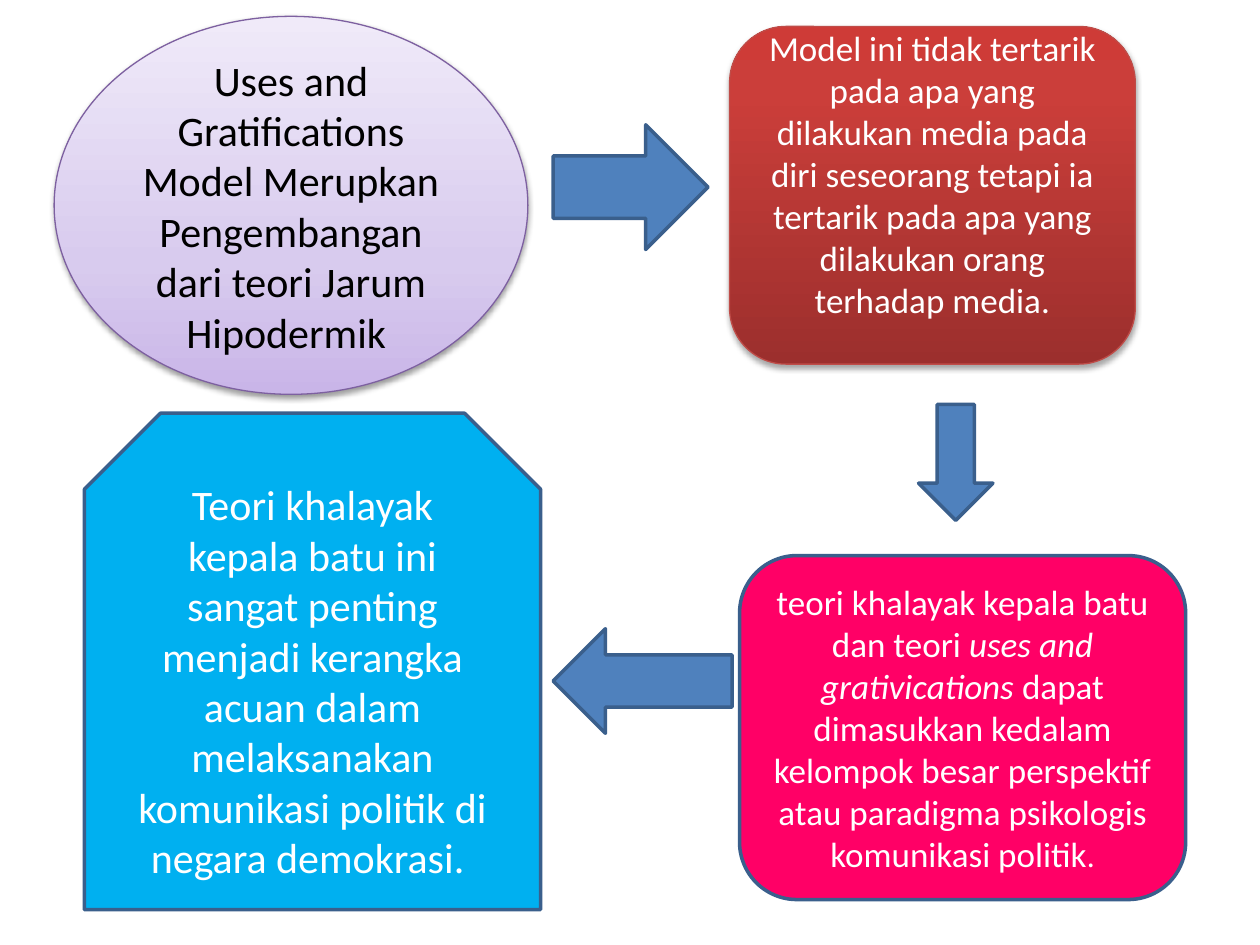
from lxml import etree
from pptx import Presentation, util as u
from pptx.dml.color import RGBColor
from pptx.enum import shapes, text
from pptx.oxml.ns import qn

W, H = 10, 7.5
FONT = "Calibri"
KIND = shapes.MSO_SHAPE
HUE = {
    "blue": "4F81BD", "edge": "3A5F8C", "sky": "00B0F0", "pink": "FF0066",
    "plum": "7D60A0", "brick": "BF4C48", "black": "000000", "white": "FFFFFF",
}
# Gradient stops run from the bottom edge to the top
LILAC = [(0, "C9B5E8"), (35, "D8CBEE"), (100, "F0EAF9")]
RED = [(0, "9C2F2D"), (80, "CB3E3A"), (100, "CE3B37")]


def rgb(name):
    return RGBColor.from_string(HUE[name])


def add_shape(slide, kind, box, fill, edge="edge", width=2):
    """Place a shape; box holds left, top, width, height in inches."""
    shape = slide.shapes.add_shape(kind, *map(u.Inches, box))
    shape.shadow.inherit = False
    if isinstance(fill, list):
        shade(shape, fill)
    else:
        shape.fill.solid()
        shape.fill.fore_color.rgb = rgb(fill)
    shape.line.color.rgb = rgb(edge)
    shape.line.width = u.Pt(width)
    return shape


def shade(shape, stops):
    """Fill with an upward gradient of any number of stops."""
    shape.fill.gradient()
    shape.fill.gradient_angle = 90
    group = shape._element.spPr.find(qn("a:gradFill")).find(qn("a:gsLst"))
    for stop in list(group):
        group.remove(stop)
    for pos, hue in stops:
        stop = etree.SubElement(group, qn("a:gs"), pos=str(pos * 1000))
        etree.SubElement(stop, qn("a:srgbClr"), val=hue)


def add_glow(shape, alpha, dist):
    """Drop a soft shadow straight down."""
    effects = shape._element.spPr.find(qn("a:effectLst"))
    drop = etree.SubElement(
        effects, qn("a:outerShdw"), blurRad=str(u.Pt(3.1)),
        dist=str(u.Pt(dist)), dir="5400000", rotWithShape="0")
    tint = etree.SubElement(drop, qn("a:srgbClr"), val=HUE["black"])
    etree.SubElement(tint, qn("a:alpha"), val=str(alpha * 1000))


def add_text(shape, runs, hue="white"):
    """Write centred runs of (words, size, italic)."""
    frame = shape.text_frame
    frame.word_wrap = True
    frame.vertical_anchor = text.MSO_ANCHOR.MIDDLE
    para = frame.paragraphs[0]
    para.alignment = text.PP_ALIGN.CENTER
    for words, size, slant in runs:
        run = para.add_run()
        run.text = words
        run.font.name = FONT
        run.font.size = u.Pt(size)
        run.font.italic = slant
        run.font.color.rgb = rgb(hue)


def main():
    deck = Presentation()
    deck.slide_width, deck.slide_height = u.Inches(W), u.Inches(H)
    slide = deck.slides.add_slide(deck.slide_layouts[6])

    # Top left: where the model comes from
    start = add_shape(slide, KIND.OVAL, (0.43, 0.13, 3.76, 3), LILAC, "plum", 0.75)
    add_glow(start, 38, 1.6)
    add_text(start, [("Uses and Gratifications Model Merupkan Pengembangan "
                      "dari teori Jarum Hipodermik ", 24, False)], "black")

    # Top right: what the model looks at, set above the middle
    focus = add_shape(slide, KIND.ROUNDED_RECTANGLE, (5.79, 0.21, 3.22, 2.68),
                      RED, "brick", 0.75)
    add_glow(focus, 35, 1.8)
    add_text(focus, [("Model ini tidak tertarik pada apa yang dilakukan media "
                      "pada diri seseorang tetapi ia tertarik pada apa yang "
                      "dilakukan orang terhadap media.", 20, False)])
    focus.text_frame.margin_bottom = u.Inches(0.39)

    # Bottom right: the wider paradigm
    group = add_shape(slide, KIND.FLOWCHART_ALTERNATE_PROCESS,
                      (5.87, 4.41, 3.54, 2.73), "pink")
    add_text(group, [
        ("teori khalayak kepala batu dan teori ", 20, False),
        ("uses and grativications ", 20, True),
        ("dapat dimasukkan kedalam kelompok besar perspektif atau "
         "paradigma psikologis komunikasi politik", 20, False),
        (".", 18, False),
    ])

    # Bottom left: the conclusion
    end = add_shape(slide, KIND.SNIP_2_SAME_RECTANGLE,
                    (0.67, 3.28, 3.62, 3.94), "sky")
    add_text(end, [("Teori khalayak kepala batu ini sangat penting menjadi "
                    "kerangka acuan dalam melaksanakan komunikasi politik di "
                    "negara demokrasi. ", 24, False)])

    # Arrows lead clockwise from box to box
    for kind, box in (
        (KIND.RIGHT_ARROW, (4.39, 0.99, 1.23, 0.99)),
        (KIND.DOWN_ARROW, (7.29, 3.21, 0.59, 0.92)),
        (KIND.LEFT_ARROW, (4.39, 4.99, 1.42, 0.83)),
    ):
        add_shape(slide, kind, box, "blue")

    deck.save("out.pptx")


if __name__ == "__main__":
    main()
